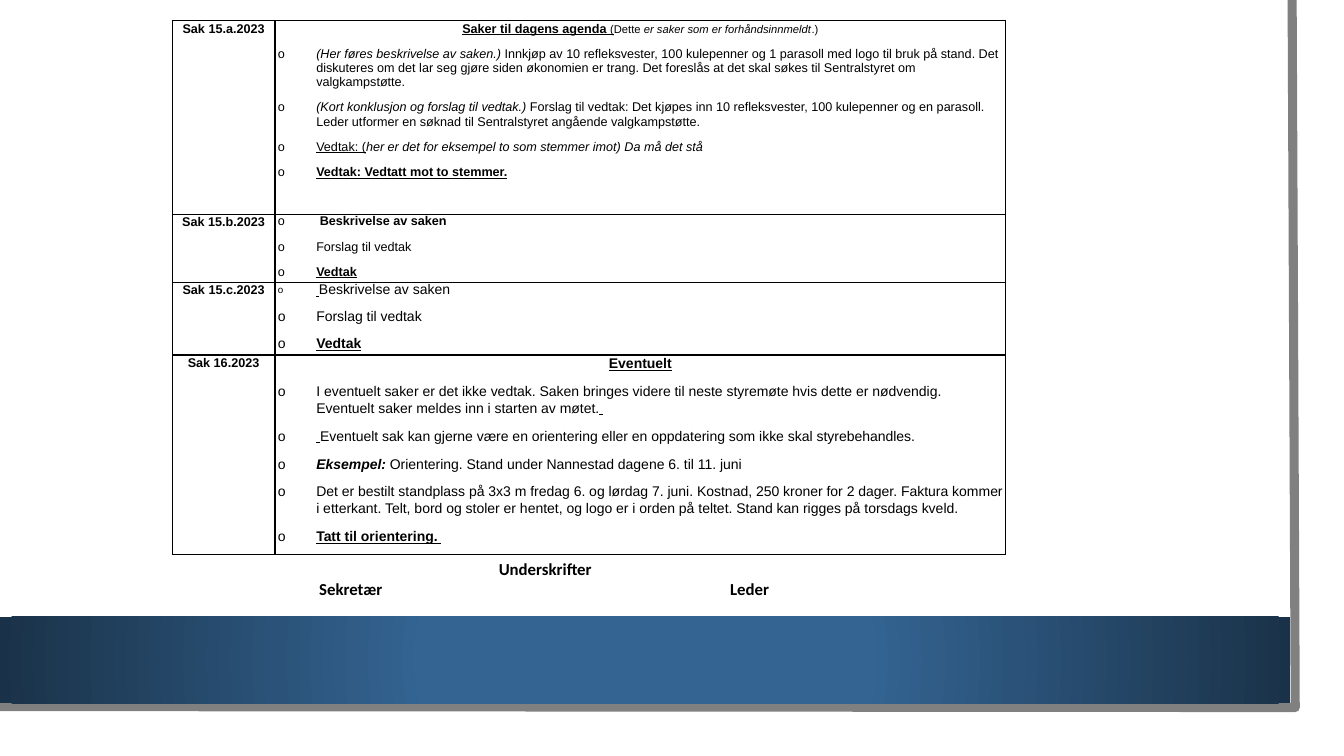
from lxml.etree import SubElement as Sub
from pptx import Presentation
from pptx.dml.color import RGBColor as RGB
from pptx.enum.shapes import MSO_SHAPE as Kind
from pptx.enum.text import MSO_ANCHOR as Anchor, PP_ALIGN as Align
from pptx.oxml import parse_xml
from pptx.oxml.ns import nsdecls, qn
from pptx.util import Pt

HUES = {"ink": "000000", "edge": "808080", "mid": "346492", "dark": "1A3249"}
MID = Align.CENTER
LEFT = Align.LEFT


class Page:
    """Holds the style and the current slide, and draws each kind of element."""

    def __init__(self, slide):
        self.slide = slide
        self.hues = HUES
        self.font = "Arial"

    def band(self, x, y, w, h, stop):
        box = self.slide.shapes.add_shape(Kind.RECTANGLE, Pt(x), Pt(y), Pt(w), Pt(h))
        box.shadow.inherit = False
        box.line.fill.background()
        stops = "".join(
            f'<a:gs pos="{pos * 1000}"><a:srgbClr val="{self.hues[hue]}"/></a:gs>'
            for pos, hue in ((stop, "mid"), (100, "dark")))
        grad = parse_xml(
            f'<a:gradFill {nsdecls("a")} rotWithShape="1"><a:gsLst>{stops}</a:gsLst>'
            '<a:path path="circle"><a:fillToRect l="50000" t="50000" r="50000" b="50000"/>'
            '</a:path></a:gradFill>')
        box._element.spPr.find(qn("a:prstGeom")).addnext(grad)

    def trace(self, dots, width):
        (x, y), *rest = [(Pt(a), Pt(b)) for a, b in dots]
        pen = self.slide.shapes.build_freeform(x, y)
        pen.add_line_segments(rest, close=False)
        form = pen.convert_to_shape()
        form.shadow.inherit = False
        form.fill.background()
        form.line.width = Pt(width)
        form.line.color.rgb = RGB.from_string(self.hues["edge"])

    def text(self, para, runs, size, font):
        for words, marks, *own in runs:
            run = para.add_run()
            run.text = words
            face = run.font
            face.name = font
            face.size = Pt(own[0] if own else size)
            face.bold = "b" in marks
            face.italic = "i" in marks
            face.underline = "u" in marks
            face.color.rgb = RGB.from_string(self.hues["ink"])

    def bullet(self, para):
        prop = para._p.get_or_add_pPr()
        prop.set("marL", str(Pt(27.36)))
        prop.set("indent", str(Pt(-27.36)))
        Sub(prop, qn("a:buFont")).set("typeface", self.font)
        Sub(prop, qn("a:buChar")).set("char", "o")

    def fill(self, cell, items, size, lead):
        cell.fill.background()
        cell.margin_left = cell.margin_right = Pt(2.2)
        cell.margin_top = cell.margin_bottom = 0
        frame = cell.text_frame
        for k, (head, runs) in enumerate(items):
            para = frame.add_paragraph() if k else frame.paragraphs[0]
            para.space_after = Pt(8)
            para.line_spacing = 1.07 if head else lead
            para.alignment = MID if head else LEFT
            if not head:
                self.bullet(para)
            self.text(para, runs, size, self.font)
        self.frame(cell)

    def frame(self, cell):
        prop = cell._tc.get_or_add_tcPr()
        for k, side in enumerate("LRTB"):
            prop.insert(k, parse_xml(
                f'<a:ln{side} {nsdecls("a")} w="{Pt(1)}"><a:solidFill>'
                f'<a:srgbClr val="{self.hues["ink"]}"/></a:solidFill></a:ln{side}>'))

    def table(self, x, y, cols, rows):
        high = sum(row[0] for row in rows)
        grid = self.slide.shapes.add_table(
            len(rows), len(cols), Pt(x), Pt(y), Pt(sum(cols)), Pt(high)).table
        grid.first_row = grid.horz_banding = False
        for col, wide in zip(grid.columns, cols):
            col.width = Pt(wide)
        for k, (tall, name, size, lead, items) in enumerate(rows):
            grid.rows[k].height = Pt(tall)
            self.fill(grid.cell(k, 0), [(True, [(name, "b")])], 9, 1.07)
            self.fill(grid.cell(k, 1), items, size, lead)

    def sign(self, x, y, w, h, title, names, stops):
        box = self.slide.shapes.add_textbox(Pt(x), Pt(y), Pt(w), Pt(h))
        frame = box.text_frame
        frame.word_wrap = True
        frame.vertical_anchor = Anchor.MIDDLE
        frame.margin_left = frame.margin_right = 0
        top, low = frame.paragraphs[0], frame.add_paragraph()
        top.alignment, low.alignment = MID, LEFT
        tabs = Sub(low._p.get_or_add_pPr(), qn("a:tabLst"))
        for stop in stops:
            tab = Sub(tabs, qn("a:tab"))
            tab.set("pos", str(Pt(stop)))
            tab.set("algn", "l")
        self.text(top, [(title, "b")], 12, "Calibri")
        self.text(low, [("\t" + name, "b") for name in names], 12, "Calibri")


ROWS = [
    (138.3, "Sak 15.a.2023", 9, 1.0, [
        (True, [("Saker til dagens agenda ", "bu"), ("(", "u", 8), ("Dette", "", 8),
                (" er saker som er forhåndsinnmeldt", "i", 8), (".)", "", 8)]),
        (False, [("(Her føres beskrivelse av saken.)", "i"),
                 (" Innkjøp av 10 refleksvester, 100 kulepenner og 1 parasoll med logo til bruk "
                  "på stand. Det diskuteres om det lar seg gjøre siden økonomien er trang. Det "
                  "foreslås at det skal søkes til Sentralstyret om valgkampstøtte.", "")]),
        (False, [("(Kort konklusjon og forslag til vedtak.) ", "i"),
                 ("Forslag til vedtak: Det kjøpes inn 10 refleksvester, 100 kulepenner og en "
                  "parasoll. Leder utformer en søknad til Sentralstyret angående "
                  "valgkampstøtte.", "")]),
        (False, [("Vedtak: (", "u"),
                 ("her er det for eksempel to som stemmer imot) Da må det stå", "i")]),
        (False, [("Vedtak: Vedtatt mot to stemmer.", "bu")]),
    ]),
    (48.5, "Sak 15.b.2023", 9, 1.0, [
        (False, [(" ", ""), ("Beskrivelse av saken", "b")]),
        (False, [("Forslag til vedtak", "")]),
        (False, [("Vedtak", "bu")]),
    ]),
    (52, "Sak 15.c.2023", 10, 1.0, [
        (False, [(" ", "bu", 7), ("Beskrivelse av saken", "")]),
        (False, [("Forslag til vedtak", "")]),
        (False, [("Vedtak", "bu")]),
    ]),
    (142.5, "Sak 16.2023", 10, 1.07, [
        (True, [("Eventuelt", "bu")]),
        (False, [("I eventuelt saker er det ikke vedtak. Saken bringes videre til neste "
                  "styremøte hvis dette er nødvendig. Eventuelt saker meldes inn i starten "
                  "av møtet.", ""), (" ", "u")]),
        (False, [(" ", "u"), ("Eventuelt sak kan gjerne være en orientering eller en "
                              "oppdatering som ikke skal styrebehandles.", "")]),
        (False, [("Eksempel: ", "bi"),
                 ("Orientering. Stand under Nannestad dagene 6. til 11. juni", "")]),
        (False, [("Det er bestilt standplass på 3x3 m fredag 6. og lørdag 7. juni. Kostnad, "
                  "250 kroner for 2 dager. Faktura kommer i etterkant. Telt, bord og stoler "
                  "er hentet, og logo er i orden på teltet. Stand kan rigges på torsdags "
                  "kveld.", "")]),
        (False, [("Tatt til orientering. ", "bu")]),
    ]),
]


def main():
    deck = Presentation()
    deck.slide_width, deck.slide_height = Pt(960), Pt(540)
    page = Page(deck.slides.add_slide(deck.slide_layouts[6]))
    page.trace([(923, 0), (925.2, 505.4), (-2, 504.7)], 6.5)
    page.band(0, 440.6, 921.6, 61.6, 34)
    page.table(123, 14.8, (73.4, 522), ROWS)
    page.sign(123, 395.3, 533, 36, "Underskrifter", ("Sekretær", "Leder"), (105, 398.5))
    deck.save("out.pptx")


if __name__ == "__main__":
    main()
